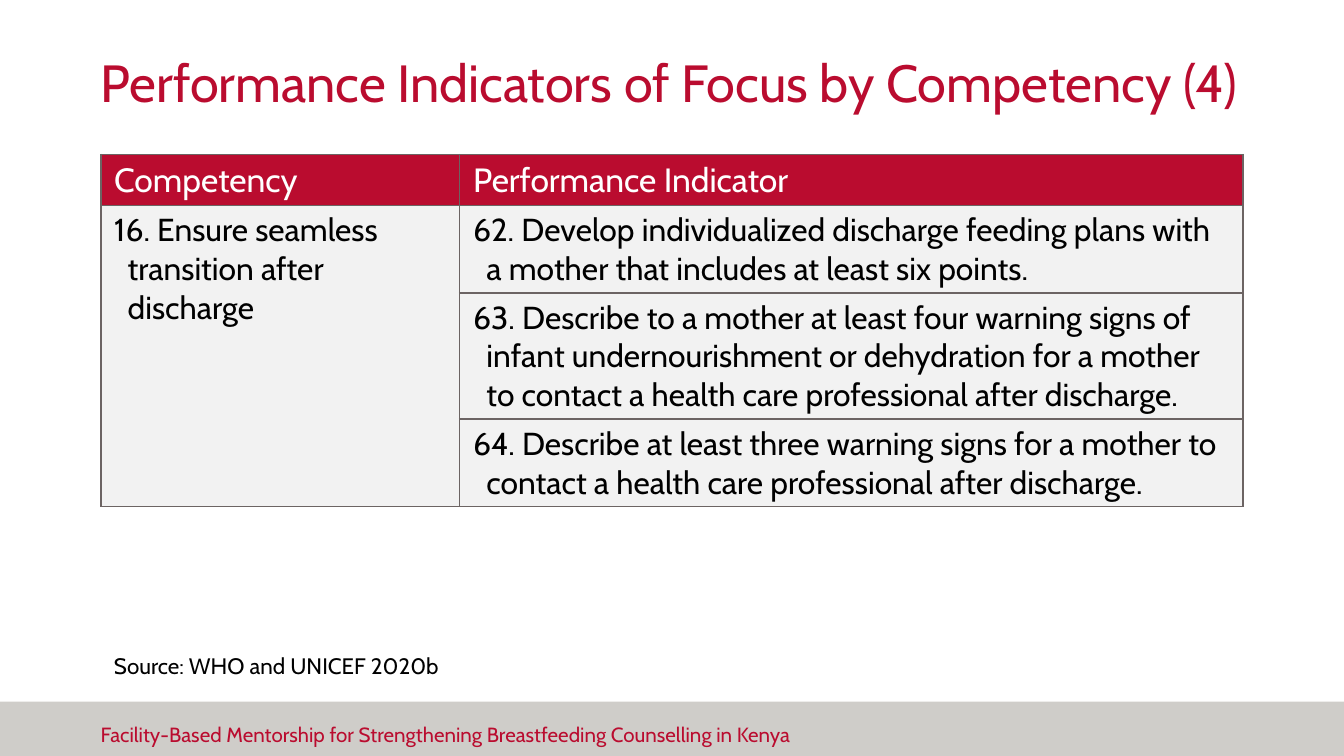
from dataclasses import dataclass

import pptx
import pptx.dml.color
import pptx.enum.shapes
import pptx.enum.text
import pptx.oxml
import pptx.oxml.ns
import pptx.util
from pptx.util import Inches


@dataclass(frozen=True)
class Theme:
    font: str = "Cabin"
    red: str = "BA0C2F"
    white: str = "FFFFFF"
    black: str = "000000"
    band: str = "CFCDC9"
    cell: str = "F2F2F2"
    border: str = "6C6463"
    title_size: int = 28
    header_size: int = 18
    body_size: int = 17
    source_size: int = 12
    footer_size: int = 11


THEME = Theme()
PLAIN_TABLE_STYLE = "{2D5ABB26-0587-4C30-8999-92F81FD0307C}"
LEFT = 0.75
CONTENT_WIDTH = 8.5
COLUMN_WIDTHS = [2.67, 5.83]
ROW_HEIGHTS = [0.38, 0.65, 0.94, 0.65]
HEADERS = ["Competency", "Performance Indicator"]
COMPETENCY = "16. Ensure seamless transition after discharge"
INDICATORS = [
    "62. Develop individualized discharge feeding plans with a mother "
    "that includes at least six points.",
    "63. Describe to a mother at least four warning signs of infant "
    "undernourishment or dehydration for a mother to contact a health care "
    "professional after discharge.",
    "64. Describe at least three warning signs for a mother to contact "
    "a health care professional after discharge.",
]


def rgb(value):
    return pptx.dml.color.RGBColor.from_string(value)


def write_text(text_frame, text, size, color):
    text_frame.text = text
    paragraph = text_frame.paragraphs[0]
    paragraph.alignment = pptx.enum.text.PP_ALIGN.LEFT
    font = paragraph.runs[0].font
    font.name = THEME.font
    font.size = pptx.util.Pt(size)
    font.bold = False
    font.color.rgb = rgb(color)


def set_insets(target, left, top, right, bottom):
    target.margin_left = Inches(left)
    target.margin_top = Inches(top)
    target.margin_right = Inches(right)
    target.margin_bottom = Inches(bottom)


def add_band(slide):
    band = slide.shapes.add_shape(
        pptx.enum.shapes.MSO_SHAPE.RECTANGLE,
        Inches(0), Inches(5.22), Inches(10), Inches(0.41))
    band.shadow.inherit = False
    band.fill.solid()
    band.fill.fore_color.rgb = rgb(THEME.band)
    band.line.fill.background()


def add_label(slide, text, top, width, height, size, color, left_inset):
    box = slide.shapes.add_textbox(
        Inches(LEFT), Inches(top), Inches(width), Inches(height))
    text_frame = box.text_frame
    text_frame.word_wrap = True
    set_insets(text_frame, left_inset, 0.05, 0.1, 0.05)
    write_text(text_frame, text, size, color)


def set_title(slide, text):
    title = slide.shapes.title
    title.left, title.top = Inches(LEFT), Inches(0.28)
    title.width, title.height = Inches(CONTENT_WIDTH), Inches(0.56)
    text_frame = title.text_frame
    text_frame.auto_size = pptx.enum.text.MSO_AUTO_SIZE.NONE
    text_frame.vertical_anchor = pptx.enum.text.MSO_ANCHOR.BOTTOM
    set_insets(text_frame, 0, 0, 0, 0)
    write_text(text_frame, text, THEME.title_size, THEME.red)


def style_cell(cell, fill):
    set_insets(cell, 0.1, 0.04, 0.1, 0.04)
    cell.fill.solid()
    cell.fill.fore_color.rgb = rgb(fill)
    # Borders must come before the fill in the cell properties
    properties = cell._tc.get_or_add_tcPr()
    for index, side in enumerate(("lnL", "lnR", "lnT", "lnB")):
        properties.insert(index, pptx.oxml.parse_xml(
            f'<a:{side} {pptx.oxml.ns.nsdecls("a")} w="{pptx.util.Pt(1)}">'
            f'<a:solidFill><a:srgbClr val="{THEME.border}"/></a:solidFill>'
            f'</a:{side}>'))


def write_item(cell, text):
    write_text(cell.text_frame, text, THEME.body_size, THEME.black)
    # Hanging indent for the numbered item
    properties = cell.text_frame.paragraphs[0]._p.get_or_add_pPr()
    properties.set("marL", str(Inches(0.1)))
    properties.set("indent", str(Inches(-0.1)))


def add_indicator_table(slide):
    table = slide.shapes.add_table(
        len(ROW_HEIGHTS), len(COLUMN_WIDTHS), Inches(LEFT), Inches(1.15),
        Inches(CONTENT_WIDTH), Inches(sum(ROW_HEIGHTS))).table
    table.first_row = False
    table.horz_banding = False
    style_id = table._tbl.tblPr.find(pptx.oxml.ns.qn("a:tableStyleId"))
    style_id.text = PLAIN_TABLE_STYLE
    for column, width in zip(table.columns, COLUMN_WIDTHS):
        column.width = Inches(width)
    for index, (row, height) in enumerate(zip(table.rows, ROW_HEIGHTS)):
        row.height = Inches(height)
        for cell in row.cells:
            style_cell(cell, THEME.cell if index else THEME.red)

    for column, header in enumerate(HEADERS):
        write_text(table.cell(0, column).text_frame, header,
                   THEME.header_size, THEME.white)
    table.cell(1, 0).merge(table.cell(len(INDICATORS), 0))
    write_item(table.cell(1, 0), COMPETENCY)
    for row, indicator in enumerate(INDICATORS, start=1):
        write_item(table.cell(row, 1), indicator)


def main():
    # Widescreen slide, 16:9
    presentation = pptx.Presentation()
    presentation.slide_width = Inches(10)
    presentation.slide_height = Inches(10 * 9 / 16)
    slide = presentation.slides.add_slide(presentation.slide_layouts[5])

    # Footer
    add_band(slide)
    add_label(slide, "Facility-Based Mentorship for Strengthening "
              "Breastfeeding Counselling in Kenya",
              5.32, 5.26, 0.47, THEME.footer_size, THEME.red, left_inset=0)

    # Title, table and source
    set_title(slide, "Performance Indicators of Focus by Competency (4)")
    add_indicator_table(slide)
    add_label(slide, "Source: WHO and UNICEF 2020b",
              4.8, 6.94, 0.3, THEME.source_size, THEME.black, left_inset=0.1)

    presentation.save("out.pptx")


if __name__ == "__main__":
    main()
